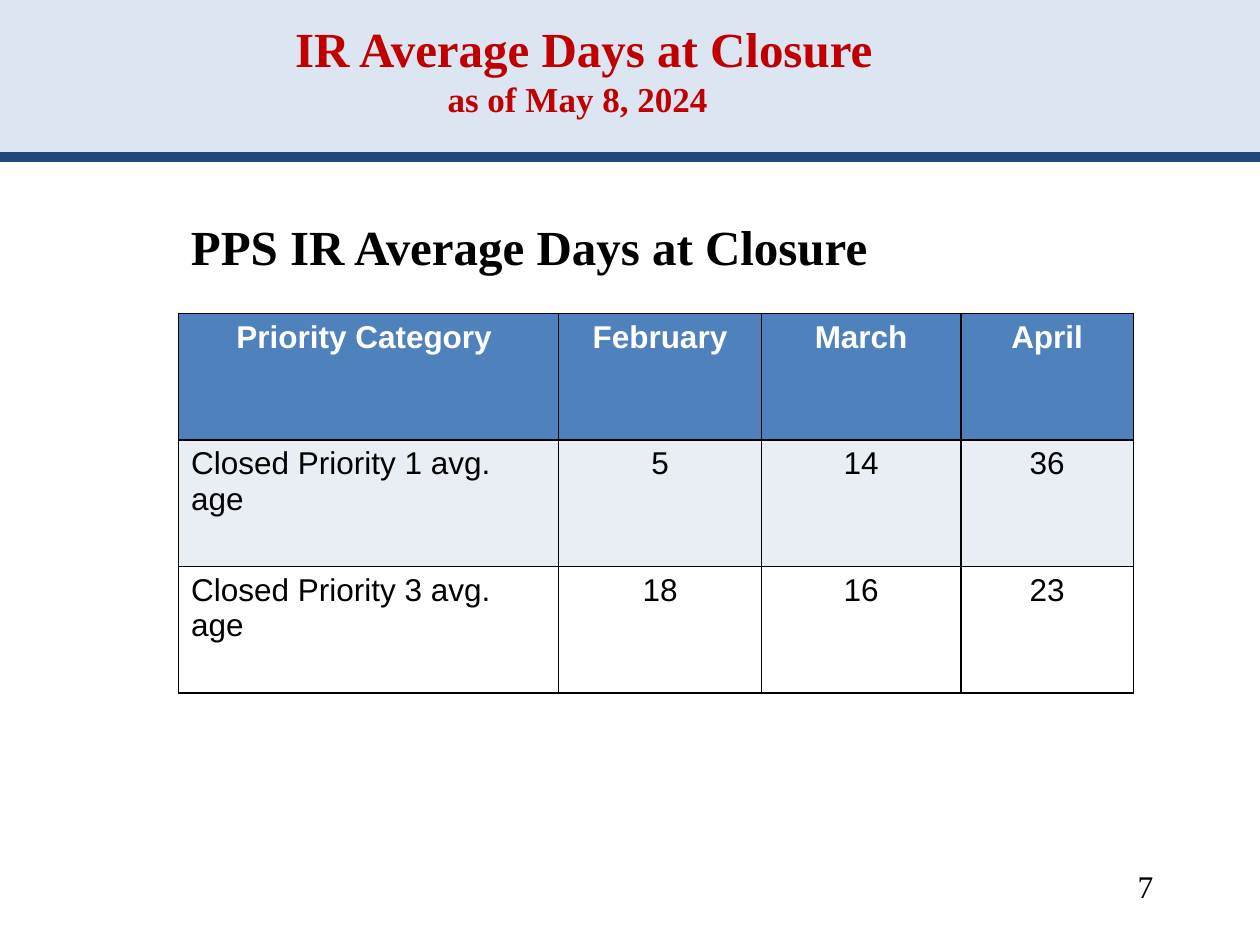
from lxml import etree
from pptx import Presentation
from pptx import util as u
from pptx.dml.color import RGBColor
from pptx.enum import shapes, text
from pptx.oxml import ns

SERIF, SANS = "Times New Roman", "Arial"
BLACK, WHITE, RED = "000000", "FFFFFF", "C00000"
BAND, RULE = "DCE6F2", "1F497D"
HEADER, STRIPE = "4F81BD", "E9EDF4"
LEFT, CENTER, RIGHT = text.PP_ALIGN.LEFT, text.PP_ALIGN.CENTER, text.PP_ALIGN.RIGHT


def colour(value):
    return RGBColor.from_string(value)


class ReportSlide:
    def __init__(self, deck):
        self.slide = deck.slides.add_slide(deck.slide_layouts[6])
        self.shapes = self.slide.shapes

    def band(self, left, top, width, height, fill):
        band = self.shapes.add_shape(
            shapes.MSO_SHAPE.RECTANGLE, u.Cm(left), u.Cm(top), u.Cm(width), u.Cm(height))
        band.shadow.inherit = False
        band.fill.solid()
        band.fill.fore_color.rgb = colour(fill)
        band.line.fill.background()

    def rule(self, x1, y1, x2, y2, stroke, weight):
        rule = self.shapes.add_connector(
            shapes.MSO_CONNECTOR.STRAIGHT, u.Cm(x1), u.Cm(y1), u.Cm(x2), u.Cm(y2))
        rule.line.color.rgb = colour(stroke)
        rule.line.width = u.Pt(weight)
        etree.SubElement(rule._element.spPr, ns.qn("a:effectLst"))

    def run(self, paragraph, words, size, font, ink, bold):
        run = paragraph.add_run()
        run.text = words
        run.font.size = u.Pt(size)
        run.font.name = font
        run.font.color.rgb = colour(ink)
        run.font.bold = bold

    def text(self, left, top, width, height, lines, ink=BLACK, bold=True,
             align=LEFT, anchor=text.MSO_ANCHOR.TOP):
        frame = self.shapes.add_textbox(
            u.Cm(left), u.Cm(top), u.Cm(width), u.Cm(height)).text_frame
        frame.word_wrap = True
        frame.vertical_anchor = anchor
        paragraph = frame.paragraphs[0]
        paragraph.alignment = align
        for number, (words, size) in enumerate(lines):
            if number:
                paragraph.add_line_break()
            self.run(paragraph, words, size, SERIF, ink, bold)

    def border(self, cell):
        properties = cell._tc.get_or_add_tcPr()
        for side in ("lnL", "lnR", "lnT", "lnB"):
            edge = etree.SubElement(properties, ns.qn(f"a:{side}"), w=str(u.Pt(1)))
            fill = etree.SubElement(edge, ns.qn("a:solidFill"))
            etree.SubElement(fill, ns.qn("a:srgbClr"), val=BLACK)

    def table(self, left, top, widths, row_height, rows, fills):
        table = self.shapes.add_table(
            len(rows), len(widths), u.Cm(left), u.Cm(top),
            u.Cm(sum(widths)), u.Cm(row_height * len(rows))).table
        for column, width in zip(table.columns, widths):
            column.width = u.Cm(width)
        for r, (values, fill) in enumerate(zip(rows, fills)):
            table.rows[r].height = u.Cm(row_height)
            header = r == 0
            for c, value in enumerate(values):
                cell = table.cell(r, c)
                self.border(cell)
                cell.fill.solid()
                cell.fill.fore_color.rgb = colour(fill)
                paragraph = cell.text_frame.paragraphs[0]
                paragraph.alignment = CENTER if header or c else LEFT
                self.run(paragraph, value, 18, SANS, WHITE if header else BLACK, header)


def main():
    deck = Presentation()
    deck.slide_width, deck.slide_height = u.Cm(25.4), u.Cm(19.05)
    report = ReportSlide(deck)
    report.band(0, 0, 25.4, 3.15, BAND)
    report.rule(0, 3.17, 25.4, 3.17, RULE, 5.5)
    report.text(0.43, 0.76, 22.43, 1.78,
                [(" IR Average Days at Closure", 28), ("as of May 8, 2024", 20)],
                ink=RED, align=CENTER, anchor=text.MSO_ANCHOR.BOTTOM)
    report.text(3.6, 4.24, 19.9, 1.45, [("PPS IR Average Days at Closure", 28)])
    days_at_closure = [
        ("Priority Category ", "February", "March", "April"),
        ("Closed Priority 1 avg. age", "5", "14", "36"),
        ("Closed Priority 3 avg. age", "18", "16", "23"),
    ]
    report.table(3.6, 6.32, [7.66, 4.09, 4.02, 3.48], 2.55,
                 days_at_closure, [HEADER, STRIPE, WHITE])
    report.text(18.2, 17.35, 5.3, 1.27, [("7", 18)], bold=False, align=RIGHT)
    deck.save("out.pptx")


if __name__ == "__main__":
    main()
